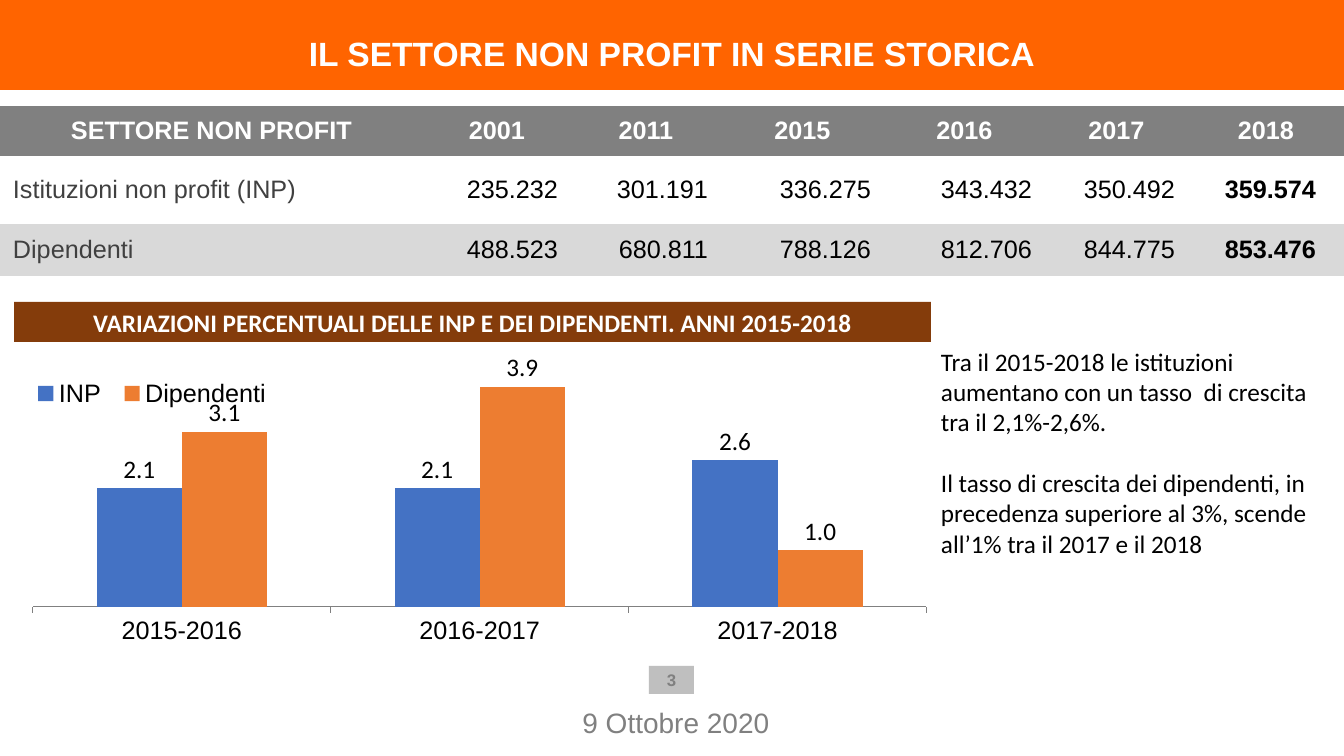
from lxml.etree import SubElement
from pptx import Presentation
from pptx.chart.data import CategoryChartData
from pptx.dml.color import RGBColor
from pptx.enum.chart import XL_CHART_TYPE, XL_LABEL_POSITION, XL_LEGEND_POSITION, XL_TICK_MARK
from pptx.enum.shapes import MSO_SHAPE
from pptx.enum.text import MSO_ANCHOR, MSO_AUTO_SIZE, PP_ALIGN
from pptx.oxml.ns import qn
from pptx.util import Emu, Pt

PX = 914400 / 100.8
WHITE = RGBColor(0xFF, 0xFF, 0xFF)
BLACK = RGBColor(0, 0, 0)
ORANGE = RGBColor(0xFF, 0x64, 0x00)
BROWN = RGBColor(0x84, 0x3C, 0x0B)
DARK = RGBColor(0x40, 0x40, 0x40)
GRAY = RGBColor(0x80, 0x80, 0x80)
SILVER = RGBColor(0xBF, 0xBF, 0xBF)
PALE = RGBColor(0xD9, 0xD9, 0xD9)
BLUE = RGBColor(0x44, 0x72, 0xC4)
AMBER = RGBColor(0xED, 0x7D, 0x31)
NO_GRID = "{2D5ABB26-0587-4C30-8999-92F81FD0307C}"

YEARS = ["2001", "2011", "2015", "2016", "2017", "2018"]
ROWS = [
    ["SETTORE NON PROFIT"] + YEARS,
    ["Istituzioni non profit (INP)", "235.232", "301.191", "336.275",
     "343.432", "350.492", "359.574"],
    ["Dipendenti", "488.523", "680.811", "788.126", "812.706", "844.775",
     "853.476"],
]
FILLS = [GRAY, WHITE, PALE]
WIDTHS = [423, 148, 150, 163, 161, 143, 156]
HEIGHTS = [50, 68, 52]
PERIODS = ["2015-2016", "2016-2017", "2017-2018"]
SERIES = [("INP", (2.1, 2.1, 2.6), BLUE), ("Dipendenti", (3.1, 3.9, 1), AMBER)]
NOTES = [
    "Tra il 2015-2018 le istituzioni aumentano con un tasso  di crescita "
    "tra il 2,1%-2,6%.",
    "Il tasso di crescita dei dipendenti, in precedenza superiore al 3%, "
    "scende all’1% tra il 2017 e il 2018",
]


def px(num):
    return Emu(round(num * PX))


def box(*nums):
    return [px(num) for num in nums]


def put(item, vals):
    for name, val in vals.items():
        setattr(item, name, val)


def style(font, color, size, name="Arial", bold=False):
    put(font, {"size": Pt(size), "name": name, "bold": bold})
    font.color.rgb = color


def inset(item, left, top, right, base):
    put(item, {"margin_left": px(left), "margin_top": px(top),
               "margin_right": px(right), "margin_bottom": px(base)})


def write(frame, lines, align, gap=0, **look):
    """Fill a text frame, with gap points between its paragraphs."""
    for i, line in enumerate(lines):
        para = frame.add_paragraph() if i else frame.paragraphs[0]
        para.text = line
        para.alignment = align
        if i:
            para.space_before = Pt(gap)
        style(para.runs[0].font, **look)


def add_title(slide, text):
    title = slide.shapes.title
    put(title, dict(zip(("left", "top", "width", "height"), box(0, 0, 1344, 90))))
    title.fill.solid()
    title.fill.fore_color.rgb = ORANGE
    frame = title.text_frame
    put(frame, {"word_wrap": True, "auto_size": MSO_AUTO_SIZE.NONE,
                "vertical_anchor": MSO_ANCHOR.TOP})
    inset(frame, 31, 16, 31, 16)
    write(frame, [text], PP_ALIGN.CENTER, color=WHITE, size=24, bold=True)
    frame.paragraphs[0].line_spacing = Pt(40.8)


def add_bar(slide, area, fill, text, **look):
    bar = slide.shapes.add_shape(MSO_SHAPE.RECTANGLE, *box(*area))
    bar.shadow.inherit = False
    bar.fill.solid()
    bar.fill.fore_color.rgb = fill
    bar.line.fill.background()
    put(bar.text_frame, {"word_wrap": True, "vertical_anchor": MSO_ANCHOR.MIDDLE})
    write(bar.text_frame, [text], PP_ALIGN.CENTER, bold=True, **look)


def add_text(slide, area, lines, align, anchor=MSO_ANCHOR.TOP, base=5, **look):
    frame = slide.shapes.add_textbox(*box(*area)).text_frame
    put(frame, {"word_wrap": True, "vertical_anchor": anchor})
    inset(frame, 10, 5, 10, base)
    write(frame, lines, align, **look)


def add_grid(slide):
    size = len(ROWS), len(WIDTHS)
    area = box(0, 106, sum(WIDTHS), sum(HEIGHTS))
    table = slide.shapes.add_table(*size, *area).table
    table.horz_banding = False
    table._tbl.tblPr.find(qn("a:tableStyleId")).text = NO_GRID
    for col, width in zip(table.columns, WIDTHS):
        col.width = px(width)
    for r, texts in enumerate(ROWS):
        table.rows[r].height = px(HEIGHTS[r])
        for c, text in enumerate(texts):
            cell = table.cell(r, c)
            last = c == len(WIDTHS) - 1
            cell.fill.solid()
            cell.fill.fore_color.rgb = FILLS[r]
            cell.vertical_anchor = MSO_ANCHOR.MIDDLE
            inset(cell, 13, 7, 28 if r and last else 13, 7)
            if r == 0:
                align, color = PP_ALIGN.CENTER, WHITE
            elif c == 0:
                align, color = PP_ALIGN.LEFT, DARK
            else:
                align, color = PP_ALIGN.RIGHT, BLACK
            write(cell.text_frame, [text], align, color=color, size=18,
                  bold=r == 0 or last)


def place(part, before, inner=False, **nums):
    """Give a chart part a fixed layout, as fractions of the chart."""
    for old in part.findall(qn("c:layout")):
        part.remove(old)
    layout = SubElement(part, qn("c:layout"))
    manual = SubElement(layout, qn("c:manualLayout"))
    if inner:
        SubElement(manual, qn("c:layoutTarget")).set("val", "inner")
    for key in ("xMode", "yMode"):
        SubElement(manual, qn("c:" + key)).set("val", "edge")
    for key, num in nums.items():
        SubElement(manual, qn("c:" + key)).set("val", str(num))
    part.find(qn(before)).addprevious(layout)


def add_columns(slide):
    data = CategoryChartData(number_format="0.0")
    data.categories = PERIODS
    for name, vals, _ in SERIES:
        data.add_series(name, vals)
    chart = slide.shapes.add_chart(
        XL_CHART_TYPE.COLUMN_CLUSTERED, *box(13, 341, 993, 309), data).chart
    put(chart, {"has_title": False, "has_legend": True})
    style(chart.font, BLACK, 18, "Calibri")

    legend = chart.legend
    put(legend, {"position": XL_LEGEND_POSITION.RIGHT, "include_in_layout": False})
    style(legend.font, BLACK, 18)
    place(legend._element, "c:overlay", x=0.01, y=0.11, w=0.26, h=0.12)
    area = chart._chartSpace.chart.plotArea
    place(area, "c:barChart", inner=True, x=0.02, y=0.04, w=0.9, h=0.82)

    axis = chart.category_axis
    axis.major_tick_mark = XL_TICK_MARK.OUTSIDE
    axis.format.line.color.rgb = GRAY
    style(axis.tick_labels.font, BLACK, 18)
    put(chart.value_axis, {"visible": False, "has_major_gridlines": False,
                           "minimum_scale": 0, "maximum_scale": 4.5})

    plot = chart.plots[0]
    put(plot, {"gap_width": 150, "overlap": 0, "vary_by_categories": False,
               "has_data_labels": True})
    put(plot.data_labels, {"show_value": True, "number_format": "0.0",
                           "number_format_is_linked": False,
                           "position": XL_LABEL_POSITION.OUTSIDE_END})
    style(plot.data_labels.font, BLACK, 18, "Calibri")
    for series, (_, _, color) in zip(plot.series, SERIES):
        series.format.fill.solid()
        series.format.fill.fore_color.rgb = color


def main():
    deck = Presentation()
    put(deck, {"slide_width": px(1344), "slide_height": px(756)})
    slide = deck.slides.add_slide(deck.slide_layouts[5])
    add_title(slide, "IL SETTORE NON PROFIT IN SERIE STORICA")
    add_bar(slide, (649, 666, 45, 28), SILVER, "3", color=GRAY, size=12)
    add_columns(slide)
    add_grid(slide)
    add_text(slide, (398, 703, 556, 36), ["9 Ottobre 2020"], PP_ALIGN.CENTER,
             MSO_ANCHOR.BOTTOM, base=0, color=GRAY, size=20)
    add_text(slide, (931, 341, 412, 224), NOTES, PP_ALIGN.LEFT, gap=22,
             color=BLACK, size=18, name="Calibri")
    add_bar(slide, (14, 302, 917, 40), BROWN,
            "VARIAZIONI PERCENTUALI DELLE INP E DEI DIPENDENTI. ANNI 2015-2018",
            color=WHITE, size=18, name="Calibri")
    deck.save("out.pptx")


if __name__ == "__main__":
    main()
